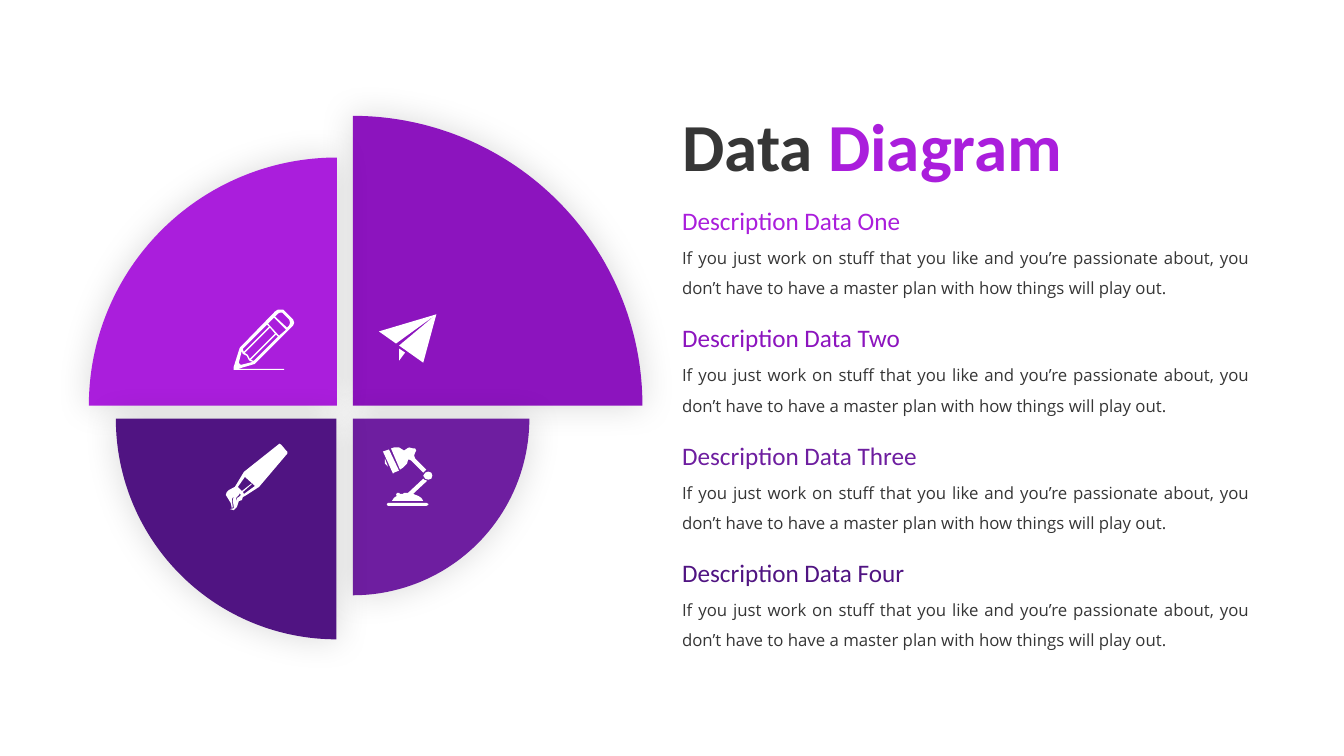
from lxml import etree
from pptx import Presentation
from pptx.dml.color import RGBColor
from pptx.enum import shapes, text
from pptx.oxml import ns
from pptx.util import Cm, Pt

DARK, WHITE = "363636", "FFFFFF"
BODY = ("If you just work on stuff that you like and you’re passionate about, "
        "you don’t have to have a master plan with how things will play out.")
TEXT_LEFT = 16.94
ICON_UNIT = Cm(0.0254)

# name, colour
ROWS = [("One", "AA1EDC"), ("Two", "8C14BE"),
        ("Three", "6E1EA0"), ("Four", "501482")]

# left, top, size in cm, rotation, colour
WEDGES = [(8.89, 2.92, 7.3, 90, "8C14BE"),
          (2.24, 3.97, 6.25, 0, "AA1EDC"),
          (8.89, 10.55, 4.45, 180, "6E1EA0"),
          (2.92, 10.55, 5.56, 270, "501482")]

# Contours in icon units; inner contours cut holes
PENCIL = [
    [(22, 53), (57, 18), (59, 16), (60, 13), (59, 10), (57, 8), (51, 2),
     (49, 0), (44, 0), (41, 2), (6, 38), (0, 57), (0, 60), (50, 60),
     (50, 59), (4, 59), (21, 54)],
    [(44, 4), (46, 3), (48, 3), (49, 4), (55, 10), (56, 13), (55, 16),
     (53, 18), (41, 7)],
    [(40, 8), (52, 20), (45, 26), (34, 14)],
    [(41, 24), (16, 49), (14, 45), (11, 43), (36, 18)],
    [(33, 15), (35, 17), (10, 42), (9, 39)],
    [(7, 55), (5, 53), (8, 41), (9, 44), (13, 46), (15, 50), (16, 51),
     (19, 52)],
    [(17, 50), (42, 25), (44, 27), (20, 51)],
]
BRUSH = [
    [(60, 7), (55, 1), (53, 0), (52, 1), (18, 28), (9, 43), (3, 46),
     (1, 48), (0, 51), (2, 54), (5, 59), (6, 64), (7, 63), (6, 55), (8, 52),
     (7, 56), (8, 64), (4, 65), (8, 66), (11, 63), (12, 60), (13, 57),
     (16, 56), (17, 53), (19, 52), (33, 43), (61, 10), (61, 8)],
    [(11, 54), (10, 58), (10, 54), (13, 51), (14, 49), (15, 51), (13, 53)],
    [(18, 50), (17, 48), (25, 41), (26, 40), (25, 40), (16, 47), (12, 43),
     (19, 33), (29, 42)],
]
LAMP = [
    [(2, 17), (2, 12), (5, 20)],
    [(10, 27), (11, 26), (16, 24), (6, 3), (0, 5)],
    [(20, 21), (24, 17), (25, 13), (26, 13), (28, 14), (40, 26), (41, 25),
     (43, 23), (32, 12), (31, 9), (32, 6), (33, 4), (32, 2), (30, 2),
     (26, 1), (24, 2), (21, 4), (16, 1), (11, 1), (8, 2), (17, 23)],
    [(5, 56), (43, 56), (45, 57), (45, 58), (43, 59), (5, 59), (4, 58),
     (4, 57)],
    [(48, 26), (45, 25), (42, 26), (40, 29), (42, 32), (45, 33), (48, 32),
     (49, 29)],
    [(40, 32), (25, 46), (21, 46), (20, 47), (17, 47), (16, 46), (14, 46),
     (13, 48), (14, 49), (11, 51), (9, 54), (40, 54), (38, 51), (35, 49),
     (32, 48), (30, 47), (44, 34), (41, 33)],
]
PLANE = [
    [(57, 0), (44, 48), (20, 31)],
    [(17, 29), (57, 0), (0, 17)],
    [(20, 46), (26, 38), (20, 34)],
]
# left, top in cm, contours
ICONS = [(5.89, 7.8, PENCIL), (5.69, 11.18, BRUSH),
         (9.65, 11.25, LAMP), (9.55, 7.92, PLANE)]


def rgb(value):
    return RGBColor.from_string(value)


def paint(sp, color):
    sp.shadow.inherit = False
    sp.fill.solid()
    sp.fill.fore_color.rgb = rgb(color)
    sp.line.fill.background()


def add_glow_shadow(sp):
    """Give the shape a soft, centred black shadow."""
    effects = sp._element.spPr.find(ns.qn("a:effectLst"))
    shadow = etree.SubElement(effects, ns.qn("a:outerShdw"),
                              blurRad=str(Pt(25)), dist="0", algn="ctr",
                              rotWithShape="0")
    black = etree.SubElement(shadow, ns.qn("a:srgbClr"), val="000000")
    etree.SubElement(black, ns.qn("a:alpha"), val="15000")


def add_wedge(slide, left, top, size, rotation, color):
    sp = slide.shapes.add_shape(shapes.MSO_SHAPE.PIE_WEDGE, Cm(left), Cm(top),
                                Cm(size), Cm(size))
    sp.rotation = rotation
    paint(sp, color)
    add_glow_shadow(sp)


def add_icon(slide, left, top, contours):
    builder = slide.shapes.build_freeform(*contours[0][0], scale=ICON_UNIT)
    for contour in contours:
        builder.move_to(*contour[0])
        builder.add_line_segments(contour[1:], close=True)
    paint(builder.convert_to_shape(Cm(left), Cm(top)), WHITE)


def format_run(r, font, size, color, bold=False):
    r.font.name = font
    r.font.size = Pt(size)
    r.font.bold = bold
    r.font.color.rgb = rgb(color)


def add_text(slide, top, width, height, content, font, size, color):
    """Add a one-paragraph text box in the right column; return its paragraph."""
    sp = slide.shapes.add_textbox(Cm(TEXT_LEFT), Cm(top), Cm(width), Cm(height))
    tf = sp.text_frame
    tf.word_wrap = True
    p = tf.paragraphs[0]
    p.text = content
    format_run(p.runs[0], font, size, color)
    return p


def set_title(slide, parts):
    sp = slide.shapes.title
    sp.left, sp.top, sp.width, sp.height = (
        Cm(TEXT_LEFT), Cm(2.51), Cm(10.62), Cm(2.31))
    tf = sp.text_frame
    tf.auto_size = text.MSO_AUTO_SIZE.NONE
    tf.vertical_anchor = text.MSO_ANCHOR.TOP
    p = tf.paragraphs[0]
    p.alignment = text.PP_ALIGN.LEFT
    for content, color in parts:
        r = p.add_run()
        r.text = content
        format_run(r, "Calibri", 48, color, bold=True)


def add_description(slide, top, name, color):
    add_text(slide, top, 7.7, 1.02, f"Description Data {name}",
             "Calibri", 18, color)
    p = add_text(slide, top + 0.81, 14.81, 1.8, BODY, "Open Sans", 12, DARK)
    p.alignment = text.PP_ALIGN.JUSTIFY
    p.line_spacing = 1.5


def main():
    prs = Presentation()
    prs.slide_width, prs.slide_height = Cm(33.87), Cm(19.05)
    slide = prs.slides.add_slide(prs.slide_layouts.get_by_name("Title Only"))
    for wedge in WEDGES:
        add_wedge(slide, *wedge)
    for icon in ICONS:
        add_icon(slide, *icon)
    set_title(slide, [("Data ", DARK), ("Diagram", "AA1EDC")])
    for i, (name, color) in enumerate(ROWS):
        add_description(slide, 5.05 + 2.96 * i, name, color)
    prs.save("out.pptx")


if __name__ == "__main__":
    main()
